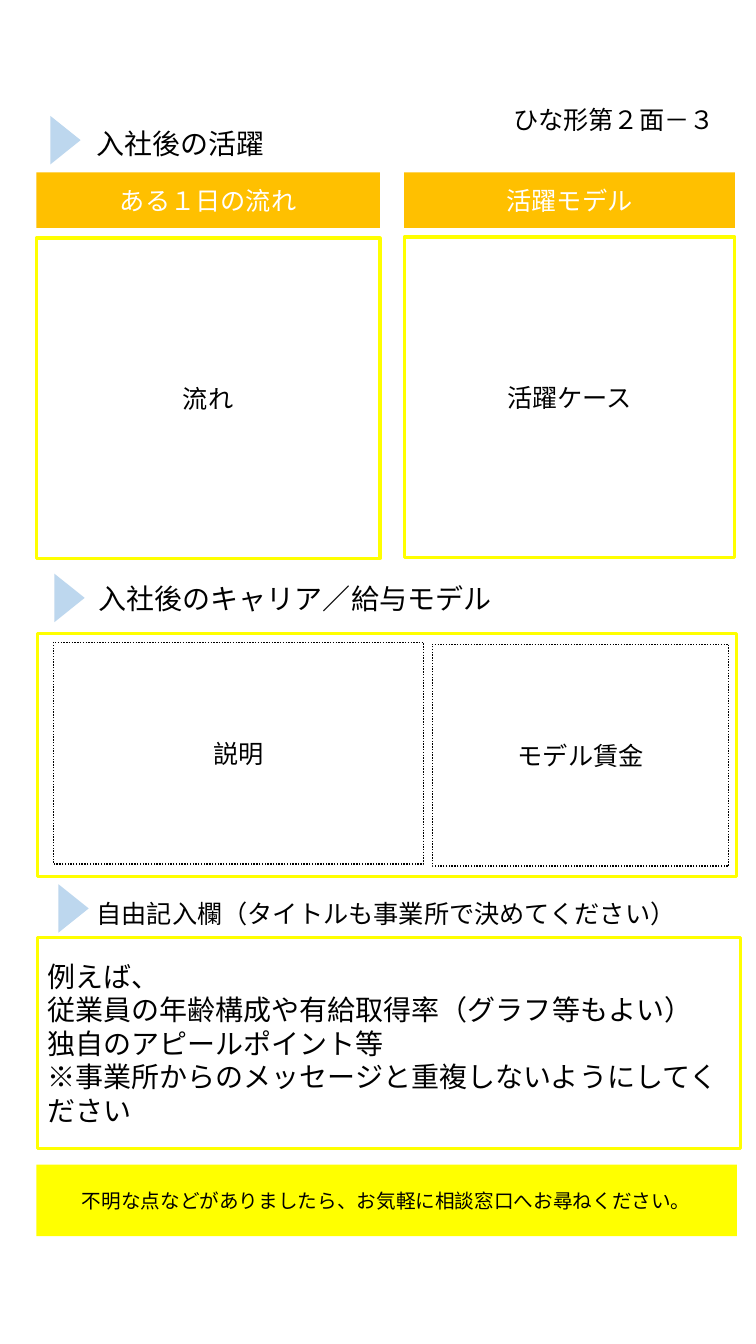
import pptx
import pptx.util
import pptx.dml.color
import pptx.enum.dml
import pptx.enum.shapes
import pptx.enum.text
import lxml.etree
from pptx.util import Inches

YELLOW = pptx.dml.color.RGBColor(0xFF, 0xFF, 0x00)
ORANGE = pptx.dml.color.RGBColor(0xFF, 0xC0, 0x00)
PALE_BLUE = pptx.dml.color.RGBColor(0xBD, 0xD7, 0xEE)
BLACK = pptx.dml.color.RGBColor(0x00, 0x00, 0x00)
WHITE = pptx.dml.color.RGBColor(0xFF, 0xFF, 0xFF)

JAPANESE_FONT = "Noto Sans CJK JP"
LATIN_FONT = "Calibri"
LEFT = pptx.enum.text.PP_ALIGN.LEFT
CENTER = pptx.enum.text.PP_ALIGN.CENTER
RECTANGLE = pptx.enum.shapes.MSO_SHAPE.RECTANGLE
TRIANGLE = pptx.enum.shapes.MSO_SHAPE.ISOSCELES_TRIANGLE

presentation = pptx.Presentation()
presentation.slide_width = Inches(7.5)
presentation.slide_height = Inches(13.33)
slide = presentation.slides.add_slide(presentation.slide_layouts[5])


def write(shape, text, size, color=BLACK, align=CENTER, font=JAPANESE_FONT):
    frame = shape.text_frame
    frame.text = text
    frame.word_wrap = True
    frame.auto_size = pptx.enum.text.MSO_AUTO_SIZE.NONE
    frame.vertical_anchor = pptx.enum.text.MSO_ANCHOR.MIDDLE
    for paragraph in frame.paragraphs:
        paragraph.alignment = align
        for run in paragraph.runs:
            run.font.size = pptx.util.Pt(size)
            run.font.color.rgb = color
            run.font.name = font
            east_asian = lxml.etree.SubElement(
                run.font._element, pptx.oxml.ns.qn("a:ea"))
            east_asian.set("typeface", JAPANESE_FONT)


def add_box(place, fill=None, line=None, width=2.25, kind=RECTANGLE):
    box = slide.shapes.add_shape(kind, *[Inches(length) for length in place])
    box.shadow.inherit = False
    if fill is None:
        box.fill.background()
    else:
        box.fill.solid()
        box.fill.fore_color.rgb = fill
    if line is None:
        box.line.fill.background()
    else:
        box.line.color.rgb = line
        box.line.width = pptx.util.Pt(width)
    return box


# Section headings, the first of which is the slide title
title = slide.shapes.title
title.left, title.top = Inches(0.86), Inches(1.18)
title.width, title.height = Inches(4.59), Inches(0.48)
write(title, "入社後の活躍", 20, align=LEFT)

for text, left, top, width, size in [
    ("入社後のキャリア／給与モデル", 0.88, 5.69, 4.59, 20),
    ("自由記入欄（タイトルも事業所で決めてください）", 0.86, 8.82, 6.45, 18),
]:
    heading = slide.shapes.add_textbox(
        Inches(left), Inches(top), Inches(width), Inches(0.48))
    write(heading, text, size, align=LEFT)

# Heading markers
for left, top in [(0.41, 1.24), (0.45, 5.78), (0.49, 8.86)]:
    marker = add_box((left, top, 0.48, 0.3), fill=PALE_BLUE, kind=TRIANGLE)
    marker.rotation = 90

# Form page label
page_label = slide.shapes.add_textbox(
    Inches(4.66), Inches(0.98), Inches(2.86), Inches(0.41))
write(page_label, "ひな形第２面－３", 18, font=LATIN_FONT)

# Life after joining: a banner above a framed area in each column
for banner_text, area_text, left, width, area_top in [
    ("ある１日の流れ", "流れ", 0.36, 3.41, 2.36),
    ("活躍モデル", "活躍ケース", 4.01, 3.28, 2.35),
]:
    banner = add_box((left, 1.71, width, 0.55), fill=ORANGE)
    write(banner, banner_text, 18, WHITE)
    area = add_box((left, area_top, width, 3.18), line=YELLOW)
    write(area, area_text, 18)

# Career and pay model: two dotted areas in one frame
add_box((0.37, 6.28, 6.94, 2.41), line=YELLOW)
for text, left, top, width in [
    ("説明", 0.53, 6.37, 3.67),
    ("モデル賃金", 4.29, 6.39, 2.94),
]:
    area = add_box((left, top, width, 2.2), line=BLACK, width=1)
    area.line.dash_style = pptx.enum.dml.MSO_LINE.ROUND_DOT
    write(area, text, 18)

# Free entry area
free_entry = add_box((0.37, 9.3, 6.98, 2.09), line=YELLOW)
write(free_entry, "\n".join([
    "例えば、",
    "従業員の年齢構成や有給取得率（グラフ等もよい）",
    "独自のアピールポイント等",
    "※事業所からのメッセージと重複しないようにしてください",
]), 20, align=LEFT)

# Contact note
contact = add_box((0.36, 11.55, 6.95, 0.71), fill=YELLOW)
write(contact, "不明な点などがありましたら、お気軽に相談窓口へお尋ねください。",
      14, font=LATIN_FONT)

presentation.save("out.pptx")
